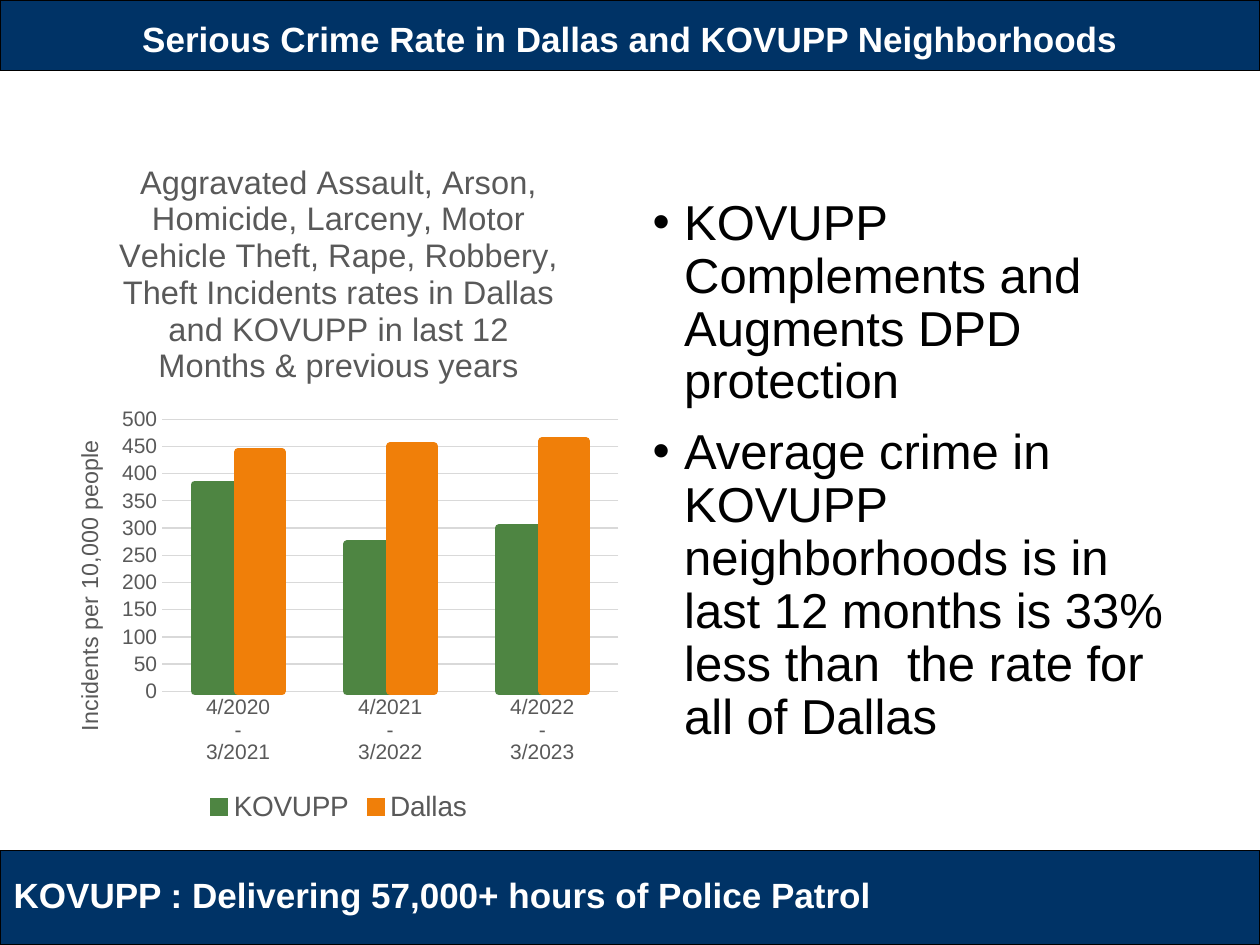
from pptx import Presentation
from pptx.chart.data import CategoryChartData
from pptx.dml.color import RGBColor
from pptx.enum.chart import XL_CHART_TYPE, XL_LEGEND_POSITION, XL_TICK_MARK
from pptx.enum.shapes import MSO_SHAPE
from pptx.enum.text import MSO_ANCHOR, MSO_AUTO_SIZE, PP_ALIGN
from pptx.util import Pt

PX = 9144  # EMU per px, 100 px to the inch
NAVY, GRAY, LIGHT_GRAY = "003366", "595959", "D9D9D9"
FONT = "Arial"
PATROL = "KOVUPP"


def color(hex_string):
    return RGBColor.from_string(hex_string)


def write_text(frame, *lines, size, fill, bold=False, align=None,
               line_spacing=None, space_before=None, indent=None):
    """Fill a text frame with one paragraph per line; indent is a hanging indent in px."""
    for index, line in enumerate(lines):
        paragraph = frame.add_paragraph() if index else frame.paragraphs[0]
        paragraph.alignment = align
        paragraph.line_spacing = line_spacing
        paragraph.space_before = space_before
        if indent:
            properties = paragraph._p.get_or_add_pPr()
            properties.set("marL", str(indent * PX))
            properties.set("indent", str(-indent * PX))
        run = paragraph.add_run()
        run.text = line
        run.font.name, run.font.size, run.font.bold = FONT, Pt(size), bold
        run.font.color.rgb = color(fill)


presentation = Presentation()
presentation.slide_width, presentation.slide_height = 1000 * PX, 750 * PX
slide = presentation.slides.add_slide(presentation.slide_layouts[1])
title, body = slide.placeholders

# Header and footer bars, kept behind the text
for top, height in ((0, 56), (675, 75)):
    bar = slide.shapes.add_shape(MSO_SHAPE.RECTANGLE, 0, top * PX, 1000 * PX, height * PX)
    bar.shadow.inherit = False
    bar.fill.solid()
    bar.fill.fore_color.rgb = color(NAVY)
    bar.line.color.rgb = color("000000")
    bar.line.width = Pt(0.75)
    slide.shapes._spTree.insert(2, bar._element)

# Title, bullet list and footer text
footer = slide.shapes.add_textbox(0, 0, PX, PX)
for shape, box in ((title, (0, 3, 1000, 59)),
                   (body, (508, 152, 442, 517)),
                   (footer, (1, 688, 707, 44))):
    shape.left, shape.top, shape.width, shape.height = [length * PX for length in box]
    shape.text_frame.auto_size = MSO_AUTO_SIZE.NONE
title.text_frame.vertical_anchor = MSO_ANCHOR.MIDDLE
footer.text_frame.word_wrap = False
footer.text_frame.auto_size = MSO_AUTO_SIZE.SHAPE_TO_FIT_TEXT

write_text(title.text_frame, f"Serious Crime Rate in Dallas and {PATROL} Neighborhoods",
           size=20, fill="FFFFFF", bold=True, align=PP_ALIGN.CENTER, line_spacing=0.9)
write_text(body.text_frame,
           f"{PATROL} Complements and Augments DPD protection",
           f"Average crime in {PATROL} neighborhoods is in last 12 months is 33% "
           "less than  the rate for all of Dallas",
           size=28, fill="000000", line_spacing=0.9, space_before=Pt(10), indent=25)
write_text(footer.text_frame, f"{PATROL} : Delivering 57,000+ hours of Police Patrol",
           size=20, fill="FFFFFF", bold=True)

# Crime rate chart
chart_data = CategoryChartData()
chart_data.categories = [f"4/{year}\n-\n3/{year + 1}" for year in (2020, 2021, 2022)]
chart_data.add_series(PATROL, (380, 270, 300))
chart_data.add_series("Dallas", (440, 450, 460))
chart = slide.shapes.add_chart(XL_CHART_TYPE.COLUMN_CLUSTERED, 38 * PX, 106 * PX,
                               462 * PX, 551 * PX, chart_data).chart
chart.font.name, chart.font.size = FONT, Pt(10)
chart.has_title = True
write_text(chart.chart_title.text_frame,
           "Aggravated Assault, Arson, Homicide, Larceny, Motor Vehicle Theft, Rape, Robbery, "
           f"Theft Incidents rates in Dallas and {PATROL} in last 12 Months & previous years",
           size=18.6, fill=GRAY)
chart.chart_title.include_in_layout = False

chart.has_legend = True
chart.legend.position = XL_LEGEND_POSITION.BOTTOM
chart.legend.include_in_layout = False
chart.legend.font.name, chart.legend.font.size = FONT, Pt(16)
chart.legend.font.color.rgb = color(GRAY)

plot = chart.plots[0]
plot.gap_width, plot.overlap = 150, 0
plot.vary_by_categories = False
for series, fill in zip(plot.series, ("4E8542", "F07F09")):
    series.format.fill.solid()
    series.format.fill.fore_color.rgb = color(fill)
    series.format.line.color.rgb = color(fill)
    series.format.line.width = Pt(4.5)

value_axis, category_axis = chart.value_axis, chart.category_axis
for axis in (value_axis, category_axis):
    axis.major_tick_mark = axis.minor_tick_mark = XL_TICK_MARK.NONE
    axis.tick_labels.font.name, axis.tick_labels.font.size = FONT, Pt(12)
    axis.tick_labels.font.color.rgb = color(GRAY)
value_axis.minimum_scale, value_axis.maximum_scale, value_axis.major_unit = 0, 500, 50
value_axis.format.line.fill.background()
write_text(value_axis.axis_title.text_frame, "Incidents per 10,000 people", size=13.3, fill=GRAY)
for line in (category_axis.format.line, value_axis.major_gridlines.format.line):
    line.color.rgb = color(LIGHT_GRAY)
    line.width = Pt(0.75)

presentation.save("out.pptx")
